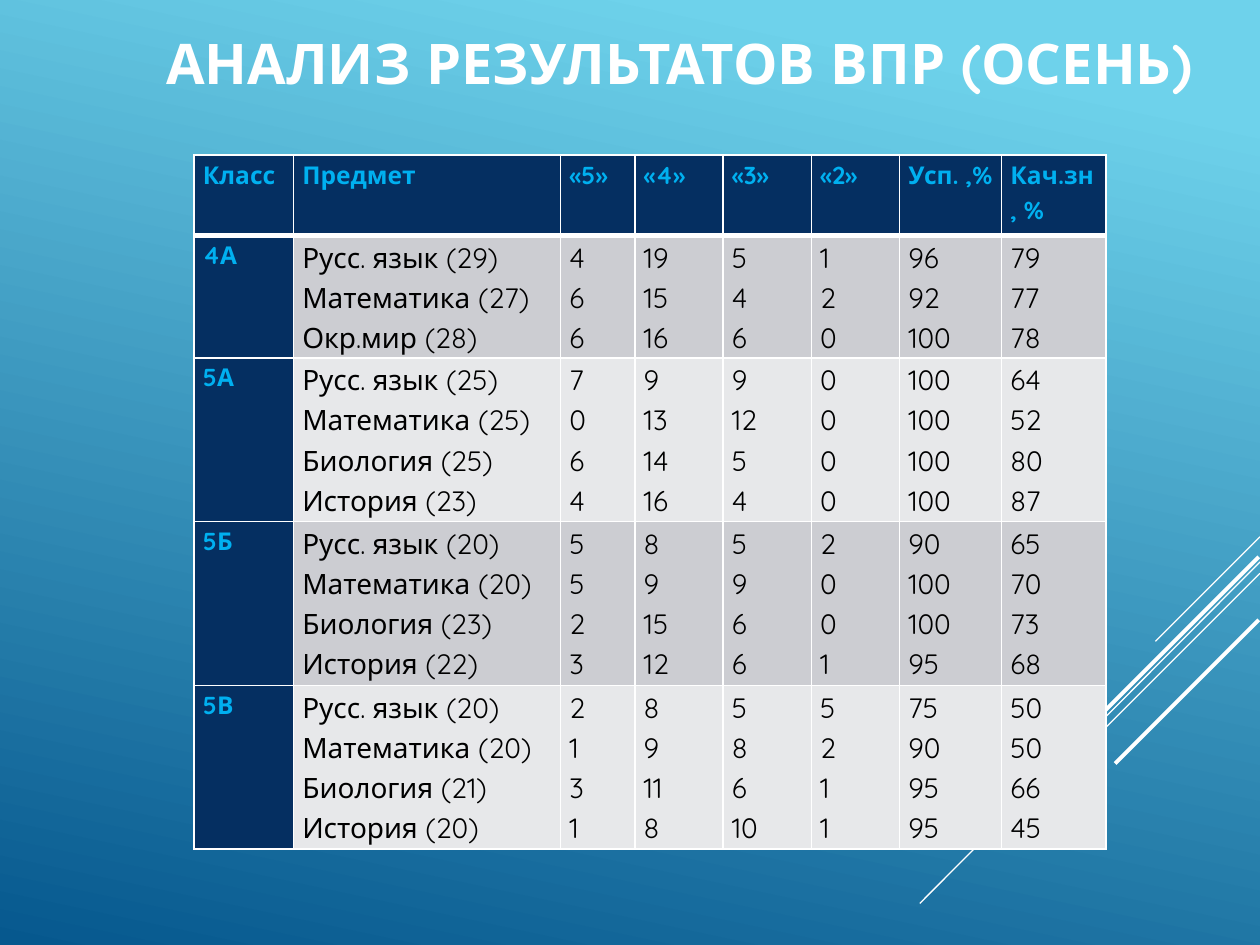
from lxml import etree
from pptx import Presentation
from pptx.dml.color import RGBColor
from pptx.enum.shapes import MSO_CONNECTOR
from pptx.enum.text import MSO_ANCHOR
from pptx.oxml.ns import qn
from pptx.util import Inches, Pt

STRAIGHT = MSO_CONNECTOR.STRAIGHT
MIDDLE = MSO_ANCHOR.MIDDLE
FONT = "Quicksand"
WHITE, BLACK, NAVY, SKY = "FFFFFF", "000000", "052F61", "00B0F0"
BANDS = ("CCCDD2", "E7E8EA")

STRIPES = [
    (10, 4.26, 9.17, 5.09, 0.75),
    (10, 4.46, 7.3, 7.17, 0.75),
    (10, 4.55, 8.28, 6.27, 0.75),
    (9.99, 4.42, 8.42, 5.99, 2.25),
    (9.99, 4.92, 8.85, 6.06, 2.25),
]
COLUMN_WIDTHS = [0.79, 2.12, 0.59, 0.7, 0.7, 0.7, 0.81, 0.83]
HEADER_HEIGHT = 0.64
HEADERS = ["Класс", "Предмет", "«5»", "«4»", "«3»", "«2»", "Усп. ,%", "Кач.зн, %"]
CLASSES = [
    ("4А", 0.97, [
        ("Русс. язык (29)", 4, 19, 5, 1, 96, 79),
        ("Математика (27)", 6, 15, 4, 2, 92, 77),
        ("Окр.мир (28)", 6, 16, 6, 0, 100, 78),
    ]),
    ("5А", 1.3, [
        ("Русс. язык (25)", 7, 9, 9, 0, 100, 64),
        ("Математика (25)", 0, 13, 12, 0, 100, 52),
        ("Биология (25)", 6, 14, 5, 0, 100, 80),
        ("История (23)", 4, 16, 4, 0, 100, 87),
    ]),
    ("5Б", 1.3, [
        ("Русс. язык (20)", 5, 8, 5, 2, 90, 65),
        ("Математика (20)", 5, 9, 9, 0, 100, 70),
        ("Биология (23)", 2, 15, 6, 0, 100, 73),
        ("История (22)", 3, 12, 6, 1, 95, 68),
    ]),
    ("5В", 1.3, [
        ("Русс. язык (20)", 2, 8, 5, 5, 75, 50),
        ("Математика (20)", 1, 9, 8, 2, 90, 50),
        ("Биология (21)", 3, 11, 6, 1, 95, 66),
        ("История (20)", 1, 8, 10, 1, 95, 45),
    ]),
]


def color(value):
    return RGBColor.from_string(value)


def set_font(para, size, value, bold):
    font = para.font
    font.name = FONT
    font.size = Pt(size)
    font.bold = bold
    font.color.rgb = color(value)


def paint_background(page):
    fill = page.background.fill
    fill.gradient()
    fill.gradient_angle = 258
    for stop, (position, value) in zip(fill.gradient_stops, [(0.1, "6ED2EB"), (1, "06588E")]):
        stop.position = position
        stop.color.rgb = color(value)


def add_stripe(page, x1, y1, x2, y2, width):
    stripe = page.shapes.add_connector(STRAIGHT, Inches(x1), Inches(y1), Inches(x2), Inches(y2))
    stripe.line.color.rgb = color(WHITE)
    stripe.line.width = Pt(width)
    etree.SubElement(stripe._element.spPr, qn("a:effectLst"))


def add_title(page, text):
    box = page.shapes.add_textbox(Inches(1.22), Inches(0.13), Inches(8.35), Inches(1.26))
    frame = box.text_frame
    frame.word_wrap = True
    frame.vertical_anchor = MIDDLE
    frame.margin_right = 0
    para = frame.paragraphs[0]
    para.text = text
    para.add_line_break()
    set_font(para, 32, WHITE, True)


def set_borders(cell, top, bottom):
    properties = cell._tc.get_or_add_tcPr()
    widths = {"a:lnL": 1, "a:lnR": 1, "a:lnT": top, "a:lnB": bottom}
    for index, (tag, width) in enumerate(widths.items()):
        border = etree.Element(qn(tag), w=str(Pt(width)))
        fill = etree.SubElement(border, qn("a:solidFill"))
        etree.SubElement(fill, qn("a:srgbClr"), val=WHITE)
        properties.insert(index, border)


def fill_cell(cell, lines, fill, size, value, bold, top=1, bottom=1):
    cell.margin_left = cell.margin_right = Inches(0.07)
    cell.margin_top = cell.margin_bottom = 0
    cell.fill.solid()
    cell.fill.fore_color.rgb = color(fill)
    cell.text = "\n".join(str(line) for line in lines)
    for para in cell.text_frame.paragraphs:
        para.line_spacing = 1.15
        set_font(para, size, value, bold)
    set_borders(cell, top, bottom)


def add_results(page):
    heights = [HEADER_HEIGHT] + [height for _, height, _ in CLASSES]
    table = page.shapes.add_table(
        len(heights), len(COLUMN_WIDTHS), Inches(1.54), Inches(1.23),
        Inches(sum(COLUMN_WIDTHS)), Inches(sum(heights)),
    ).table
    for column, width in zip(table.columns, COLUMN_WIDTHS):
        column.width = Inches(width)
    for row, height in zip(table.rows, heights):
        row.height = Inches(height)
    for index, header in enumerate(HEADERS):
        fill_cell(table.cell(0, index), [header], NAVY, 14, SKY, True, bottom=3)
    for row, (name, _, subjects) in enumerate(CLASSES, start=1):
        top = 3 if row == 1 else 1
        fill_cell(table.cell(row, 0), [name], NAVY, 14, SKY, True, top)
        for index, lines in enumerate(zip(*subjects), start=1):
            fill_cell(table.cell(row, index), lines, BANDS[(row - 1) % 2], 16, BLACK, False, top)


def main():
    deck = Presentation()
    deck.slide_width = Inches(10)
    deck.slide_height = Inches(7.5)
    page = deck.slides.add_slide(deck.slide_layouts[6])
    paint_background(page)
    for stripe in STRIPES:
        add_stripe(page, *stripe)
    add_title(page, "АНАЛИЗ РЕЗУЛЬТАТОВ ВПР (ОСЕНЬ)")
    add_results(page)
    deck.save("out.pptx")


if __name__ == "__main__":
    main()
